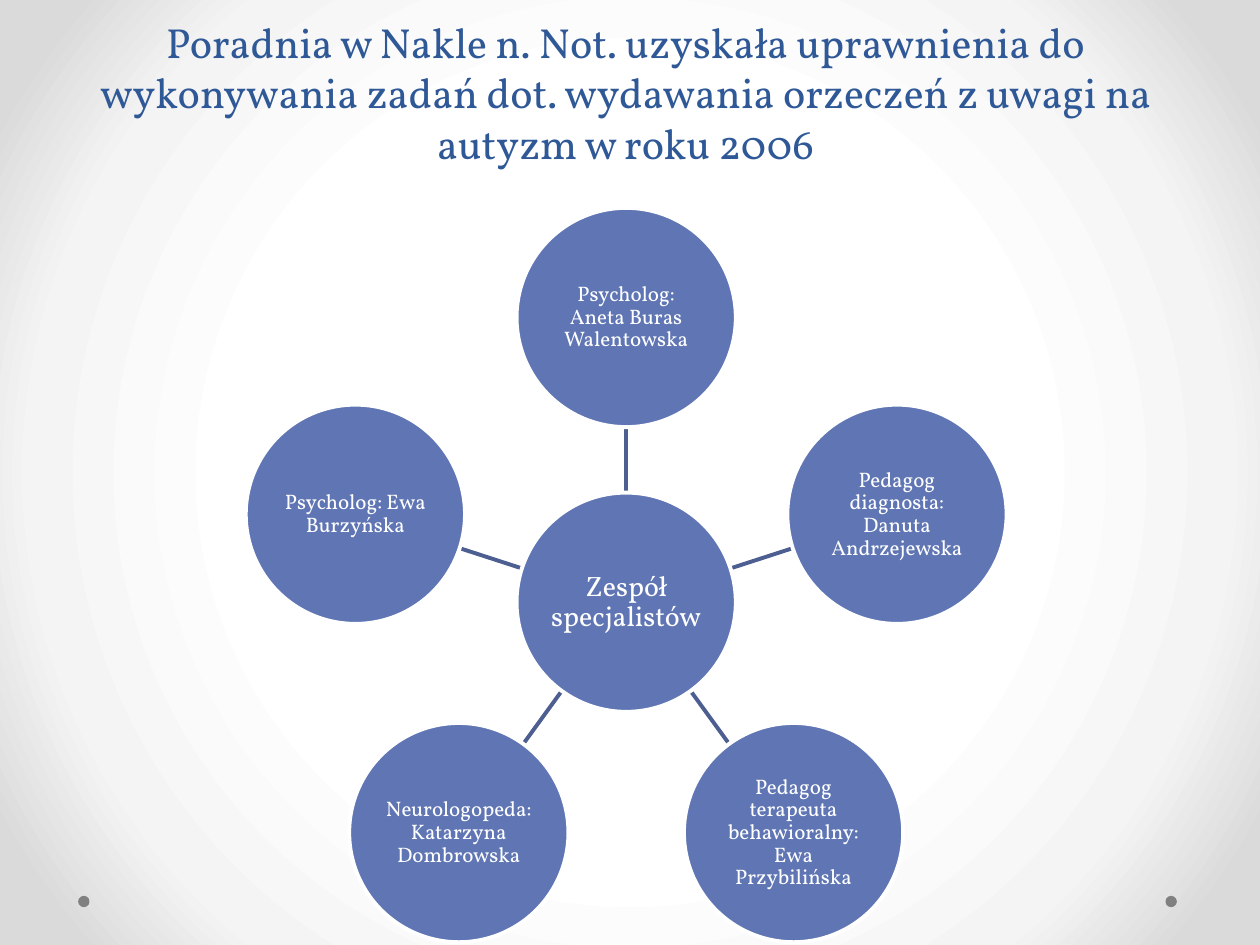
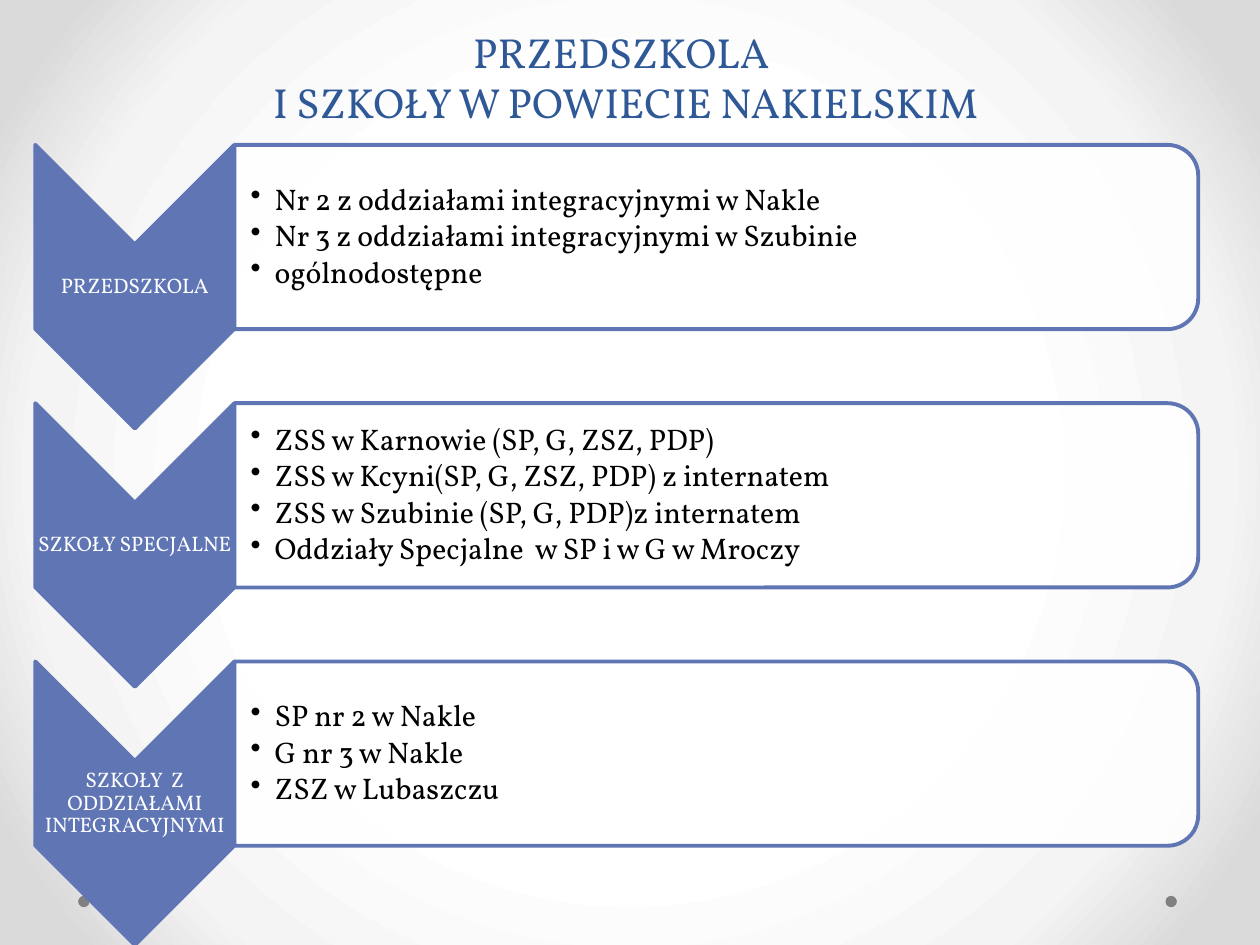
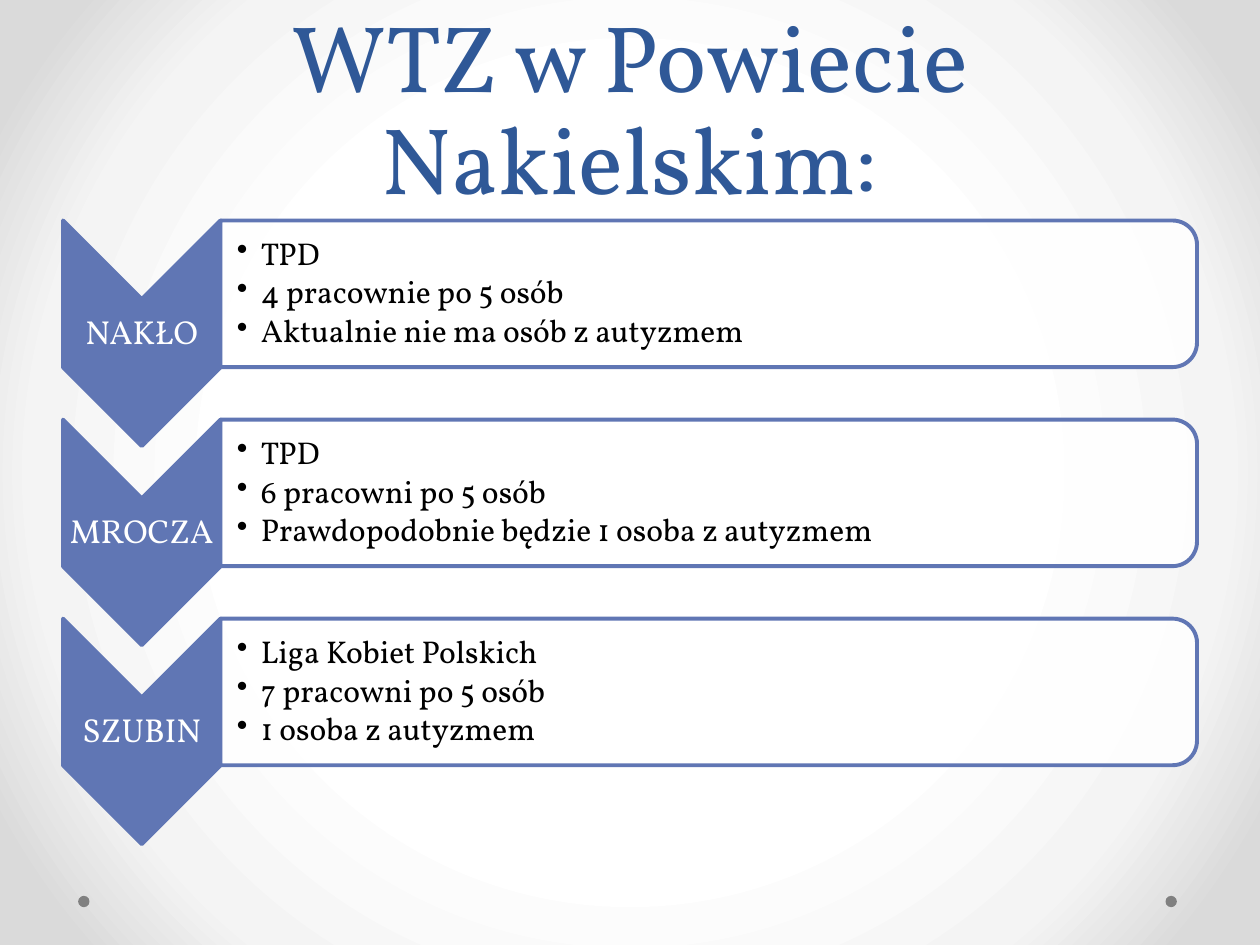
import math

import pptx
import pptx.dml.color
import pptx.enum.shapes
import pptx.enum.text
import pptx.oxml
import pptx.oxml.ns
import pptx.util
from lxml import etree

Inches, Pt = pptx.util.Inches, pptx.util.Pt
RGB = pptx.dml.color.RGBColor.from_string
SHAPE = pptx.enum.shapes.MSO_SHAPE
ALIGN = pptx.enum.text.PP_ALIGN
ANCHOR = pptx.enum.text.MSO_ANCHOR
qn = pptx.oxml.ns.qn

FONT = "Vollkorn"
NAVY, BLUE, SLATE = "2F5897", "6076B4", "4D5E90"
WHITE, BLACK, GREY = "FFFFFF", "000000", "808080"
LINE = Pt(2.25)


def add_shape(s, kind, left, top, width, height, fill, line=None, turned=False):
    """Add a filled shape; a turned one is rotated 90 degrees to cover the given frame."""
    if turned:
        left, top = left + (width - height) / 2, top + (height - width) / 2
        width, height = height, width
    sp = s.shapes.add_shape(kind, Inches(left), Inches(top), Inches(width), Inches(height))
    sp.rotation = 90 if turned else 0
    sp.shadow.inherit = False
    sp.fill.solid()
    sp.fill.fore_color.rgb = RGB(fill)
    if line:
        sp.line.color.rgb = RGB(line)
        sp.line.width = LINE
    else:
        sp.line.fill.background()
    return sp


def write(sp, lines, size, color, anchor=ANCHOR.MIDDLE, spacing=0.9, inset=0.01, bullets=False):
    """Fill a shape with paragraphs, centred or bulleted."""
    tf = sp.text_frame
    tf.word_wrap = True
    tf.vertical_anchor = anchor
    tf.margin_left = Inches(inset)
    tf.margin_right = tf.margin_top = tf.margin_bottom = Inches(0.01)
    for i, line in enumerate(lines):
        p = tf.add_paragraph() if i else tf.paragraphs[0]
        p.text = line
        p.alignment = ALIGN.LEFT if bullets else ALIGN.CENTER
        p.line_spacing = spacing
        p.font.name, p.font.size = FONT, Pt(size)
        p.font.color.rgb = RGB(color)
        if bullets:
            p.space_after = Pt(0.15 * size)
            pPr = p._p.get_or_add_pPr()
            pPr.set("marL", str(Inches(0.19)))
            pPr.set("indent", str(-Inches(0.19)))
            bullet = pptx.oxml.parse_xml(f'<a:buChar {pptx.oxml.ns.nsdecls("a")} char="•"/>')
            pPr.find(qn("a:defRPr")).addprevious(bullet)


prs = pptx.Presentation()
prs.slide_width, prs.slide_height = Inches(10), Inches(7.5)

# Shared radial background
master = prs.slide_master
master.background.fill.gradient()
grad = master.element.find(f".//{qn('p:bgPr')}/{qn('a:gradFill')}")
for child in list(grad):
    grad.remove(child)
stops = etree.SubElement(grad, qn("a:gsLst"))
for pos, color in ((50, WHITE), (76, "F4F4F4"), (92, "DADADA")):
    gs = etree.SubElement(stops, qn("a:gs"), pos=str(pos * 1000))
    etree.SubElement(gs, qn("a:srgbClr"), val=color)
circle = etree.SubElement(grad, qn("a:path"), path="circle")
etree.SubElement(circle, qn("a:fillToRect"), l="50000", t="50000", r="50000", b="50000")

# Slides with footer dots and titles: text, frame, size, line spacing
titles = [
    ("Poradnia w Nakle n. Not. uzyskała uprawnienia do wykonywania zadań dot. "
     "wydawania orzeczeń z uwagi na autyzm w roku 2006", (0.53, -0.34, 8.87, 1.68), 24, 1.0),
    ("PRZEDSZKOLA \vI SZKOŁY W POWIECIE NAKIELSKIM", (0.53, 0, 8.87, 1.02), 24, 1.0),
    ("WTZ w Powiecie Nakielskim:", (0.6, 0, 8.8, 1.7), 54, Pt(58)),
]
slides = []
for title, frame, size, spacing in titles:
    s = prs.slides.add_slide(prs.slide_layouts[6])
    for left in (9.25, 0.62):
        add_shape(s, SHAPE.OVAL, left, 7.11, 0.09, 0.09, GREY)
    sp = s.shapes.add_textbox(*map(Inches, frame))
    write(sp, [title], size, NAVY, ANCHOR.BOTTOM, spacing)
    slides.append(s)

# Slide 1: team of specialists around a hub
s = slides[0]
hub_x, hub_y, radius, orbit = 4.97, 4.78, 0.87, 2.26
specialists = [
    "Psycholog: Aneta Buras Walentowska",
    "Pedagog diagnosta: Danuta Andrzejewska",
    "Pedagog terapeuta behawioralny: Ewa Przybilińska",
    "Neurologopeda: Katarzyna Dombrowska",
    "Psycholog: Ewa Burzyńska",
]
circles = [("Zespół specjalistów", 16, hub_x, hub_y)]
for i, name in enumerate(specialists):
    angle = math.radians(360 / len(specialists) * i - 90)
    dx, dy = math.cos(angle), math.sin(angle)
    circles.append((name, 12, hub_x + orbit * dx, hub_y + orbit * dy))
    ends = [hub_x + radius * dx, hub_y + radius * dy,
            hub_x + (orbit - radius) * dx, hub_y + (orbit - radius) * dy]
    spoke = s.shapes.add_connector(pptx.enum.shapes.MSO_CONNECTOR.STRAIGHT, *map(Inches, ends))
    spoke.line.color.rgb = RGB(SLATE)
    spoke.line.width = LINE
    etree.SubElement(spoke._element.spPr, qn("a:effectLst"))
for text, size, x, y in circles:
    sp = add_shape(s, SHAPE.OVAL, x - radius, y - radius, 2 * radius, 2 * radius, BLUE, WHITE)
    write(sp, [text], size, WHITE)

# Slides 2 and 3: chevron lists
# (left, top, pitch), (chevron width, height), panel width, (label size, item size), rows
chevron_lists = [
    ((0.28, 1.15, 2.05), (1.58, 2.25), 7.65, (12, 17), [
        ("PRZEDSZKOLA", ["Nr 2 z oddziałami integracyjnymi w Nakle",
                         "Nr 3 z oddziałami integracyjnymi w Szubinie",
                         "ogólnodostępne"]),
        ("SZKOŁY SPECJALNE", ["ZSS w Karnowie (SP, G, ZSZ, PDP)",
                              "ZSS w Kcyni(SP, G, ZSZ, PDP) z internatem",
                              "ZSS w Szubinie (SP, G, PDP)z internatem",
                              "Oddziały Specjalne  w SP i w G w Mroczy"]),
        ("SZKOŁY  Z ODDZIAŁAMI INTEGRACYJNYMI", ["SP nr 2 w Nakle",
                                                 "G nr 3 w Nakle",
                                                 "ZSZ w Lubaszczu"]),
    ]),
    ((0.5, 1.75, 1.58), (1.25, 1.79), 7.75, (19, 18), [
        ("NAKŁO", ["TPD", "4 pracownie po 5 osób", "Aktualnie nie ma osób z autyzmem"]),
        ("MROCZA", ["TPD", "6 pracowni po 5 osób",
                    "Prawdopodobnie będzie 1 osoba z autyzmem"]),
        ("SZUBIN", ["Liga Kobiet Polskich", "7 pracowni po 5 osób", "1 osoba z autyzmem"]),
    ]),
]
for s, (origin, chevron, panel_w, sizes, rows) in zip(slides[1:], chevron_lists):
    left, first_top, pitch = origin
    chevron_w, chevron_h = chevron
    panel_left, panel_h = left + chevron_w, 0.65 * chevron_h
    pad = 0.05 * panel_h
    for i, (label, items) in enumerate(rows):
        top = first_top + pitch * i
        add_shape(s, SHAPE.CHEVRON, left, top, chevron_w, chevron_h, BLUE, BLUE, turned=True)
        sp = s.shapes.add_textbox(Inches(left), Inches(top + chevron_w / 2),
                                  Inches(chevron_w), Inches(chevron_h - chevron_w))
        write(sp, [label], sizes[0], WHITE)
        panel = add_shape(s, SHAPE.ROUND_2_SAME_RECTANGLE, panel_left, top, panel_w, panel_h,
                          WHITE, BLUE, turned=True)
        tint = panel._element.spPr.find(f"{qn('a:solidFill')}/{qn('a:srgbClr')}")
        etree.SubElement(tint, qn("a:alpha"), val="90000")
        sp = s.shapes.add_textbox(Inches(panel_left), Inches(top + pad),
                                  Inches(panel_w - pad), Inches(panel_h - 2 * pad))
        write(sp, items, sizes[1], BLACK, inset=0.13, bullets=True)

prs.save("out.pptx")
